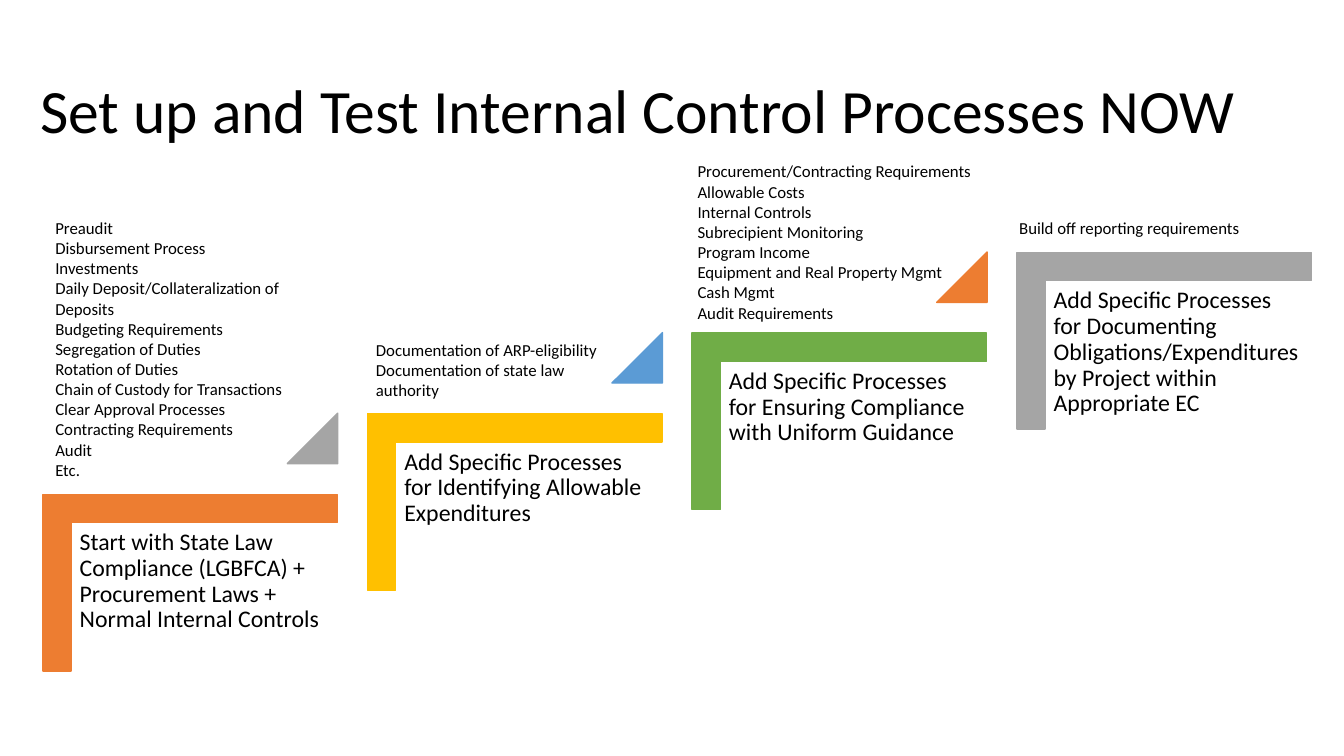
from dataclasses import dataclass

from pptx import Presentation
from pptx.dml.color import RGBColor
from pptx.enum.shapes import MSO_SHAPE
from pptx.enum.text import MSO_ANCHOR, MSO_AUTO_SIZE, PP_ALIGN
from pptx.shapes.autoshape import Shape
from pptx.slide import Slide
from pptx.text.text import TextFrame
from pptx.util import Inches, Pt

FONT = "Calibri"
BLACK = RGBColor(0x00, 0x00, 0x00)
ORANGE = RGBColor(0xED, 0x7D, 0x31)
GRAY = RGBColor(0xA5, 0xA5, 0xA5)
GOLD = RGBColor(0xFF, 0xC0, 0x00)
BLUE = RGBColor(0x5B, 0x9B, 0xD5)
GREEN = RGBColor(0x70, 0xAD, 0x47)

FIRST_LEFT, FIRST_TOP = 1.01, 4.32
STEP_RIGHT, STEP_UP = 3.22, 0.8
CORNER_WIDTH, CORNER_HEIGHT = 1.75, 2.92
CORNER_THICKNESS = 0.16
TRIANGLE_SIZE = 0.5


@dataclass(frozen=True)
class Step:
    label: str
    color: RGBColor
    triangle_color: RGBColor | None = None


@dataclass(frozen=True)
class Details:
    left: float
    top: float
    width: float
    height: float
    items: tuple[str, ...]


STEPS = (
    Step("Start with State Law Compliance (LGBFCA) + Procurement Laws + "
         "Normal Internal Controls", ORANGE, GRAY),
    Step("Add Specific Processes for Identifying Allowable Expenditures",
         GOLD, BLUE),
    Step("Add Specific Processes for Ensuring Compliance with Uniform Guidance",
         GREEN, ORANGE),
    Step("Add Specific Processes for Documenting Obligations/Expenditures "
         "by Project within Appropriate EC", GRAY),
)

DETAILS = (
    Details(0.45, 2.11, 2.63, 2.73, (
        "Preaudit",
        "Disbursement Process",
        "Investments",
        "Daily Deposit/Collateralization of Deposits",
        "Budgeting Requirements",
        "Segregation of Duties",
        "Rotation of Duties",
        "Chain of Custody for Transactions",
        "Clear Approval Processes",
        "Contracting Requirements",
        "Audit",
        "Etc.",
    )),
    Details(3.63, 3.32, 2.63, 0.71, (
        "Documentation of ARP-eligibility",
        "Documentation of state law authority",
    )),
    Details(10.01, 2.11, 2.63, 0.3, ("Build off reporting requirements",)),
    Details(6.82, 1.55, 2.97, 1.92, (
        "Procurement/Contracting Requirements",
        "Allowable Costs",
        "Internal Controls",
        "Subrecipient Monitoring",
        "Program Income",
        "Equipment and Real Property Mgmt",
        "Cash Mgmt",
        "Audit Requirements",
    )),
)


def write_lines(frame: TextFrame, lines: tuple[str, ...], size: int,
                spacing: float = 1.0) -> None:
    frame.word_wrap = True
    for index, line in enumerate(lines):
        paragraph = frame.add_paragraph() if index else frame.paragraphs[0]
        paragraph.alignment = PP_ALIGN.LEFT
        paragraph.line_spacing = spacing
        run = paragraph.add_run()
        run.text = line
        run.font.name = FONT
        run.font.size = Pt(size)
        run.font.color.rgb = BLACK


def add_solid(slide: Slide, preset: MSO_SHAPE, left: float, top: float,
              width: float, height: float, color: RGBColor) -> Shape:
    solid = slide.shapes.add_shape(
        preset, Inches(left), Inches(top), Inches(width), Inches(height))
    solid.shadow.inherit = False
    solid.fill.solid()
    solid.fill.fore_color.rgb = color
    solid.line.color.rgb = color
    solid.line.width = Pt(1)
    return solid


def add_title(slide: Slide, text: str) -> None:
    title = slide.shapes.title
    title.left, title.top = Inches(0.3), Inches(0.4)
    title.width, title.height = Inches(12.11), Inches(1.45)
    title.text_frame.vertical_anchor = MSO_ANCHOR.MIDDLE
    write_lines(title.text_frame, (text,), 44, 0.9)


def add_step(slide: Slide, step: Step, index: int) -> None:
    left = FIRST_LEFT + index * STEP_RIGHT
    top = FIRST_TOP - index * STEP_UP
    corner = add_solid(slide, MSO_SHAPE.CORNER, left, top,
                       CORNER_WIDTH, CORNER_HEIGHT, step.color)
    corner.rotation = 90
    corner.adjustments[0] = CORNER_THICKNESS
    corner.adjustments[1] = CORNER_THICKNESS

    label = slide.shapes.add_textbox(
        Inches(left - 0.29), Inches(top + 0.87), Inches(2.63), Inches(2.31))
    frame = label.text_frame
    frame.margin_left = frame.margin_right = Inches(0.07)
    frame.margin_top = frame.margin_bottom = Inches(0.07)
    write_lines(frame, (step.label,), 17, 0.9)

    if step.triangle_color is not None:
        triangle = add_solid(slide, MSO_SHAPE.ISOSCELES_TRIANGLE,
                             left + 1.84, top - 0.22,
                             TRIANGLE_SIZE, TRIANGLE_SIZE, step.triangle_color)
        triangle.adjustments[0] = 1


def add_details(slide: Slide, details: Details) -> None:
    box = slide.shapes.add_textbox(
        Inches(details.left), Inches(details.top),
        Inches(details.width), Inches(details.height))
    write_lines(box.text_frame, details.items, 12)
    box.text_frame.auto_size = MSO_AUTO_SIZE.SHAPE_TO_FIT_TEXT


def main() -> None:
    presentation = Presentation()
    presentation.slide_width = Inches(13.33)
    presentation.slide_height = Inches(7.5)
    slide = presentation.slides.add_slide(presentation.slide_layouts[5])
    add_title(slide, "Set up and Test Internal Control Processes NOW")
    for index, step in enumerate(STEPS):
        add_step(slide, step, index)
    for details in DETAILS:
        add_details(slide, details)
    presentation.save("out.pptx")


if __name__ == "__main__":
    main()
